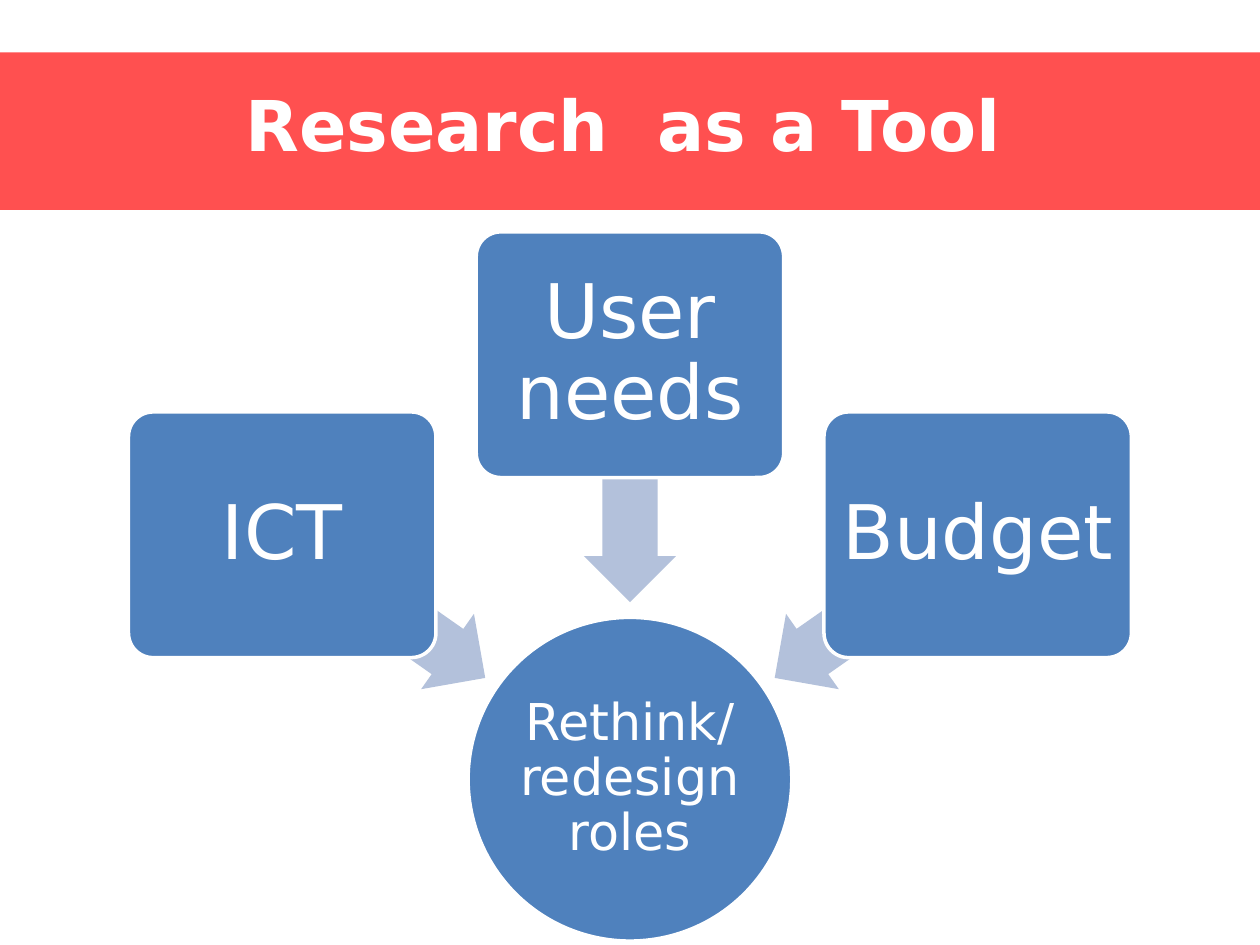
"""Build a slide showing three drivers converging on rethinking roles."""
from pptx import Presentation
from pptx.dml.color import RGBColor
from pptx.enum.shapes import MSO_SHAPE
from pptx.enum.text import MSO_ANCHOR, PP_ALIGN
from pptx.util import Pt

TITLE = "Research  as a Tool"
GOAL = "Rethink/ redesign roles"
DRIVERS = [
    {"text": "ICT", "side": -1, "box_y": 305.6, "arrow_y": 346.7, "angle": 215},
    {"text": "User needs", "side": 0, "box_y": 202.7, "arrow_y": 273.2, "angle": 270},
    {"text": "Budget", "side": 1, "box_y": 305.6, "arrow_y": 346.7, "angle": 325},
]
FONT = "DejaVu Sans"
RED, BLUE, PALE, WHITE = "FF5050", "4F81BD", "B3C1DB", "FFFFFF"
WIDTH, HEIGHT = 720, 540
CENTER = WIDTH / 2
BOX_W, BOX_H, BOX_PITCH = 175.7, 140.4, 198.7
ARROW_W, ARROW_H, ARROW_PITCH = 141.8, 52.6, 140.8
CIRCLE, CIRCLE_Y = 185, 445.3


def rgb(value):
    """Return a colour from a hex string."""
    return RGBColor.from_string(value)


def add_shape(slide, kind, cx, cy, w, h, fill, line=None):
    """Add a flat shape centred on a point."""
    sp = slide.shapes.add_shape(kind, Pt(cx - w / 2), Pt(cy - h / 2), Pt(w), Pt(h))
    sp.shadow.inherit = False
    sp.fill.solid()
    sp.fill.fore_color.rgb = rgb(fill)
    if line:
        sp.line.color.rgb = rgb(line)
        sp.line.width = Pt(2)
    else:
        sp.line.fill.background()
    return sp


def set_text(sp, text, size, insets, spacing=0.9, bold=False):
    """Write centred white text inside a shape."""
    tf = sp.text_frame
    tf.word_wrap = True
    tf.vertical_anchor = MSO_ANCHOR.MIDDLE
    tf.margin_left, tf.margin_top, tf.margin_right, tf.margin_bottom = map(Pt, insets)
    p = tf.paragraphs[0]
    p.text = text
    p.alignment = PP_ALIGN.CENTER
    p.line_spacing = spacing
    p.font.name = FONT
    p.font.size = Pt(size)
    p.font.bold = bold
    p.font.color.rgb = rgb(WHITE)


def main():
    """Create and save the slide."""
    prs = Presentation()
    prs.slide_width, prs.slide_height = Pt(WIDTH), Pt(HEIGHT)
    slide = prs.slides.add_slide(prs.slide_layouts[6])

    banner = add_shape(slide, MSO_SHAPE.RECTANGLE, CENTER, 75, WIDTH, 90, RED)
    set_text(banner, TITLE, 40, (7, 4, 15, 13), spacing=1.0, bold=True)

    goal = add_shape(slide, MSO_SHAPE.OVAL, CENTER, CIRCLE_Y, CIRCLE, CIRCLE, BLUE, WHITE)
    set_text(goal, GOAL, 29, (1.5,) * 4)

    for d in DRIVERS:
        arrow = add_shape(slide, MSO_SHAPE.LEFT_ARROW, CENTER + d["side"] * ARROW_PITCH,
                          d["arrow_y"], ARROW_W, ARROW_H, PALE)
        arrow.adjustments[0], arrow.adjustments[1] = 0.6, 0.5
        arrow.rotation = d["angle"]
        box = add_shape(slide, MSO_SHAPE.ROUNDED_RECTANGLE, CENTER + d["side"] * BOX_PITCH,
                        d["box_y"], BOX_W, BOX_H, BLUE, WHITE)
        box.adjustments[0] = 0.1
        set_text(box, d["text"], 43, (6.4,) * 4)

    prs.save("out.pptx")


if __name__ == "__main__":
    main()
